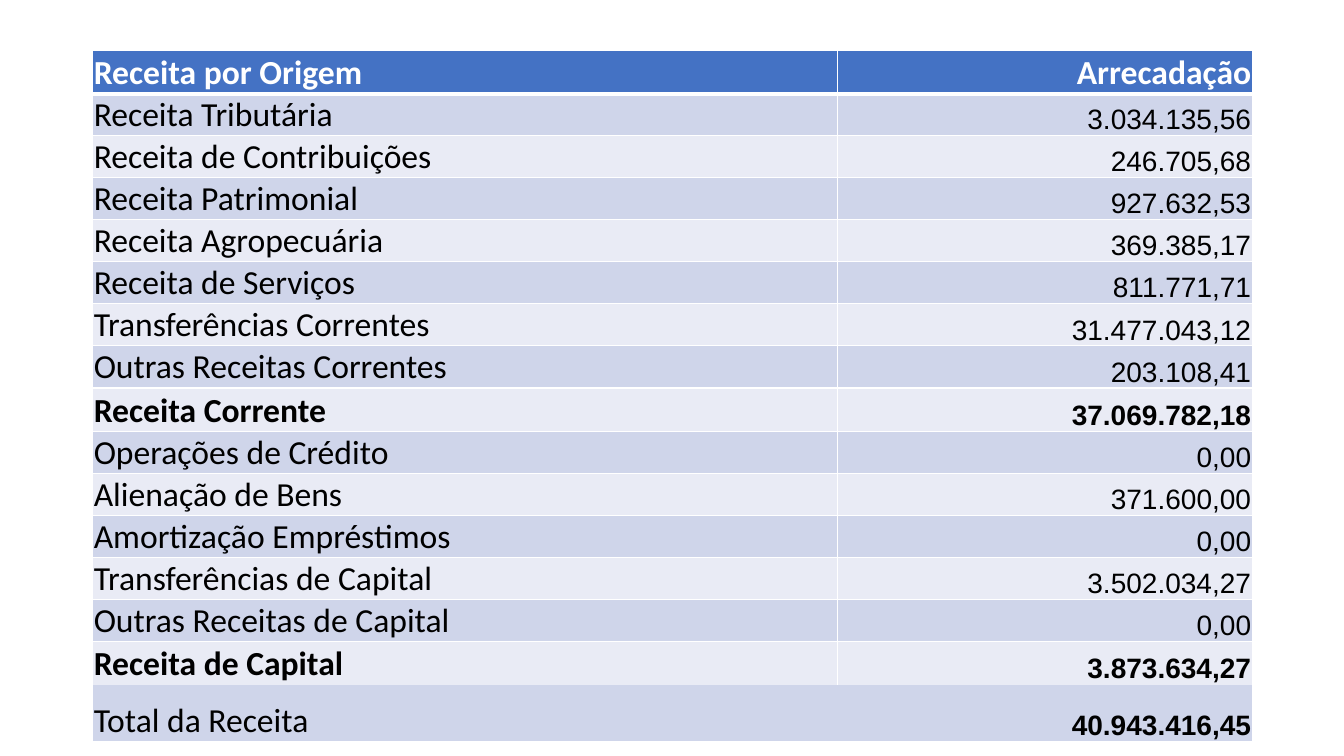
"""Build the slide with the table of revenue by origin."""
from dataclasses import dataclass

from lxml import etree
from pptx import Presentation
from pptx.dml.color import RGBColor
from pptx.enum.text import MSO_ANCHOR, PP_ALIGN
from pptx.oxml.ns import qn
from pptx.util import Emu, Pt

BOTTOM = MSO_ANCHOR.BOTTOM
LEFT, RIGHT = PP_ALIGN.LEFT, PP_ALIGN.RIGHT
WHITE = RGBColor(0xFF, 0xFF, 0xFF)
BLACK = RGBColor(0x00, 0x00, 0x00)
HEADER_BLUE = RGBColor(0x44, 0x72, 0xC4)
BANDS = (RGBColor(0xE9, 0xEB, 0xF5), RGBColor(0xCF, 0xD5, 0xEA))
EMU_PER_PX = 9144
COLUMN_WIDTHS = (739, 411)


@dataclass(frozen=True)
class Revenue:
    origin: str
    amount: str
    origin_bold: bool = False
    amount_bold: bool = False
    height: int = 41


REVENUES = (
    Revenue("Receita por Origem", "Arrecadação", True, True, 43),
    Revenue("Receita Tributária", "3.034.135,56"),
    Revenue("Receita de Contribuições", "246.705,68"),
    Revenue("Receita Patrimonial", "927.632,53"),
    Revenue("Receita Agropecuária", "369.385,17"),
    Revenue("Receita de Serviços", "811.771,71"),
    Revenue("Transferências Correntes", "31.477.043,12"),
    Revenue("Outras Receitas Correntes", "203.108,41"),
    Revenue("Receita Corrente", "37.069.782,18", True, True, 43),
    Revenue("Operações de Crédito", "0,00"),
    Revenue("Alienação de Bens", "371.600,00"),
    Revenue("Amortização Empréstimos", "0,00"),
    Revenue("Transferências de Capital", "3.502.034,27"),
    Revenue("Outras Receitas de Capital", "0,00"),
    Revenue("Receita de Capital", "3.873.634,27", True, True, 43),
    Revenue("Total da Receita", "40.943.416,45", False, True, 56),
)
TOTAL_ROW = len(REVENUES) - 1


def px(length: int) -> Emu:
    return Emu(length * EMU_PER_PX)


def add_border(cell, side: str, points: int) -> None:
    border = etree.SubElement(cell._tc.get_or_add_tcPr(), qn(f"a:ln{side}"), w=str(Pt(points)))
    if points:
        fill = etree.SubElement(border, qn("a:solidFill"))
        etree.SubElement(fill, qn("a:srgbClr"), val=str(WHITE))
    else:
        etree.SubElement(border, qn("a:noFill"))


def edge_width(edge: int) -> int:
    """Return the points of the horizontal edge above the given row."""
    if edge >= TOTAL_ROW:
        return 0
    return 3 if edge == 1 else 1


def format_cell(cell, row: int) -> None:
    cell.vertical_anchor = BOTTOM
    cell.margin_left = cell.margin_right = cell.margin_top = px(1)
    cell.margin_bottom = 0
    side_width = 0 if row == TOTAL_ROW else 1
    for side, points in (("L", side_width), ("R", side_width),
                         ("T", edge_width(row)), ("B", edge_width(row + 1))):
        add_border(cell, side, points)
    cell.fill.solid()
    cell.fill.fore_color.rgb = BANDS[row % 2] if row else HEADER_BLUE


def write_cell(cell, text: str, bold: bool, row: int, column: int) -> None:
    paragraph = cell.text_frame.paragraphs[0]
    paragraph.alignment = RIGHT if column else LEFT
    run = paragraph.add_run()
    run.text = text
    is_figure = row > 0 and column == 1
    run.font.name = "Arial" if is_figure else "Calibri"
    run.font.size = Pt(20 if is_figure else 24)
    run.font.bold = bold
    run.font.color.rgb = BLACK if row else WHITE


def add_revenue_table(slide) -> None:
    height = sum(revenue.height for revenue in REVENUES)
    table = slide.shapes.add_table(len(REVENUES), len(COLUMN_WIDTHS), px(92), px(50),
                                   px(sum(COLUMN_WIDTHS)), px(height)).table
    for column, width in zip(table.columns, COLUMN_WIDTHS):
        column.width = px(width)
    for row, revenue in enumerate(REVENUES):
        table.rows[row].height = px(revenue.height)
        entries = ((revenue.origin, revenue.origin_bold),
                   (revenue.amount, revenue.amount_bold))
        for column, (text, bold) in enumerate(entries):
            cell = table.cell(row, column)
            format_cell(cell, row)
            write_cell(cell, text, bold, row, column)


def main() -> None:
    presentation = Presentation()
    presentation.slide_width, presentation.slide_height = px(1333), px(750)
    slide = presentation.slides.add_slide(presentation.slide_layouts[6])
    add_revenue_table(slide)
    presentation.save("out.pptx")


if __name__ == "__main__":
    main()
